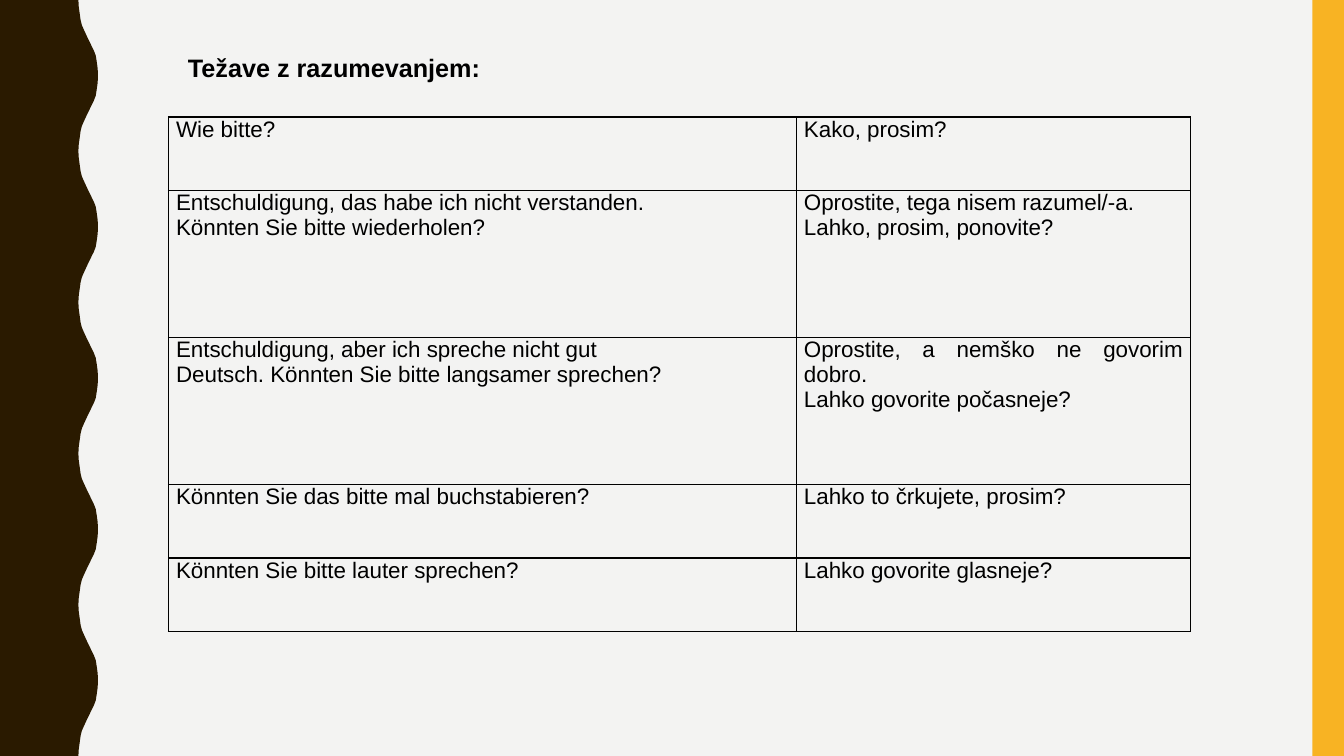
"""Builds a slide with German phrases for comprehension problems and their Slovene translations."""
from pptx import Presentation
from pptx.dml.color import RGBColor
from pptx.enum.shapes import MSO_SHAPE
from pptx.enum.text import MSO_ANCHOR as ANCHOR, MSO_AUTO_SIZE as AUTO, PP_ALIGN as ALIGN
from pptx.oxml import parse_xml
from pptx.oxml.ns import nsdecls
from pptx.util import Pt

PAPER = RGBColor(0xF3, 0xF3, 0xF2)
BROWN = RGBColor(0x2A, 0x1A, 0x00)
AMBER = RGBColor(0xF8, 0xB3, 0x23)
BLACK = RGBColor(0x00, 0x00, 0x00)

W, H = 960, 540
PERIOD = 108
HALF_WAVE = [(56, 0), (56.3, 5), (57, 10), (57.6, 14.4), (58.5, 18), (59.8, 21), (61.2, 24),
             (62.6, 27), (64.1, 30), (65.5, 33), (67, 36), (68.4, 39.6), (69.1, 44),
             (69.8, 49), (70, 54)]
COLUMNS = [448.5, 281.5]
ROW_UNIT = 52.5
PHRASES = [
    (1, "Wie bitte?", "Kako, prosim?"),
    (2, "Entschuldigung, das habe ich nicht verstanden.\nKönnten Sie bitte wiederholen?",
     "Oprostite, tega nisem razumel/-a.\nLahko, prosim, ponovite?"),
    (2, "Entschuldigung, aber ich spreche nicht gut\nDeutsch. Könnten Sie bitte langsamer sprechen?",
     "Oprostite, a nemško ne govorim dobro.\nLahko govorite počasneje?"),
    (1, "Könnten Sie das bitte mal buchstabieren?", "Lahko to črkujete, prosim?"),
    (1, "Könnten Sie bitte lauter sprechen?", "Lahko govorite glasneje?"),
]
CELL_FORMAT = {"margin_left": Pt(5.4), "margin_right": Pt(5.4), "margin_top": 0,
               "margin_bottom": 0, "vertical_anchor": ANCHOR.TOP}


def write(tf, text, size, bold=False):
    tf.text = text
    for p in tf.paragraphs:
        p.alignment = ALIGN.JUSTIFY
        for r in p.runs:
            for name, value in {"name": "Arial", "size": Pt(size), "bold": bold}.items():
                setattr(r.font, name, value)
            r.font.color.rgb = BLACK


def paint(sp, color):
    sp.shadow.inherit = False
    sp.fill.solid()
    sp.fill.fore_color.rgb = color
    sp.line.fill.background()


prs = Presentation()
prs.slide_width, prs.slide_height = Pt(W), Pt(H)
s = prs.slides.add_slide(prs.slide_layouts[6])
s.background.fill.solid()
s.background.fill.fore_color.rgb = PAPER

wave = HALF_WAVE + [(x, PERIOD - y) for x, y in HALF_WAVE[-2::-1]]
edge = [(x, y + top) for top in range(0, H, PERIOD) for x, y in wave]
builder = s.shapes.build_freeform(0, 0)
builder.add_line_segments([(Pt(x), Pt(y)) for x, y in edge + [(0, H)]], close=True)
paint(builder.convert_to_shape(), BROWN)

paint(s.shapes.add_shape(MSO_SHAPE.RECTANGLE, Pt(937.5), 0, Pt(22.5), Pt(H)), AMBER)

units = sum(row[0] for row in PHRASES)
table = s.shapes.add_table(len(PHRASES), len(COLUMNS), Pt(120.4), Pt(83.6),
                           Pt(sum(COLUMNS)), Pt(units * ROW_UNIT)).table
table.first_row = table.horz_banding = False
for column, width in zip(table.columns, COLUMNS):
    column.width = Pt(width)
for row, (height, *texts) in zip(table.rows, PHRASES):
    row.height = Pt(height * ROW_UNIT)
    for cell, text in zip(row.cells, texts):
        for name, value in CELL_FORMAT.items():
            setattr(cell, name, value)
        tcPr = cell._tc.get_or_add_tcPr()
        for side in "LRTB":
            tcPr.append(parse_xml(
                f'<a:ln{side} {nsdecls("a")} w="{Pt(1)}"><a:solidFill>'
                f'<a:srgbClr val="{BLACK}"/></a:solidFill></a:ln{side}>'))
        cell.fill.background()
        write(cell.text_frame, text, 16)

tf = s.shapes.add_textbox(Pt(127.2), Pt(33.4), Pt(225.4), Pt(29)).text_frame
for name, value in {"word_wrap": False, "auto_size": AUTO.SHAPE_TO_FIT_TEXT,
                    "vertical_anchor": ANCHOR.MIDDLE}.items():
    setattr(tf, name, value)
write(tf, "Težave z razumevanjem:", 18, True)

prs.save("out.pptx")
